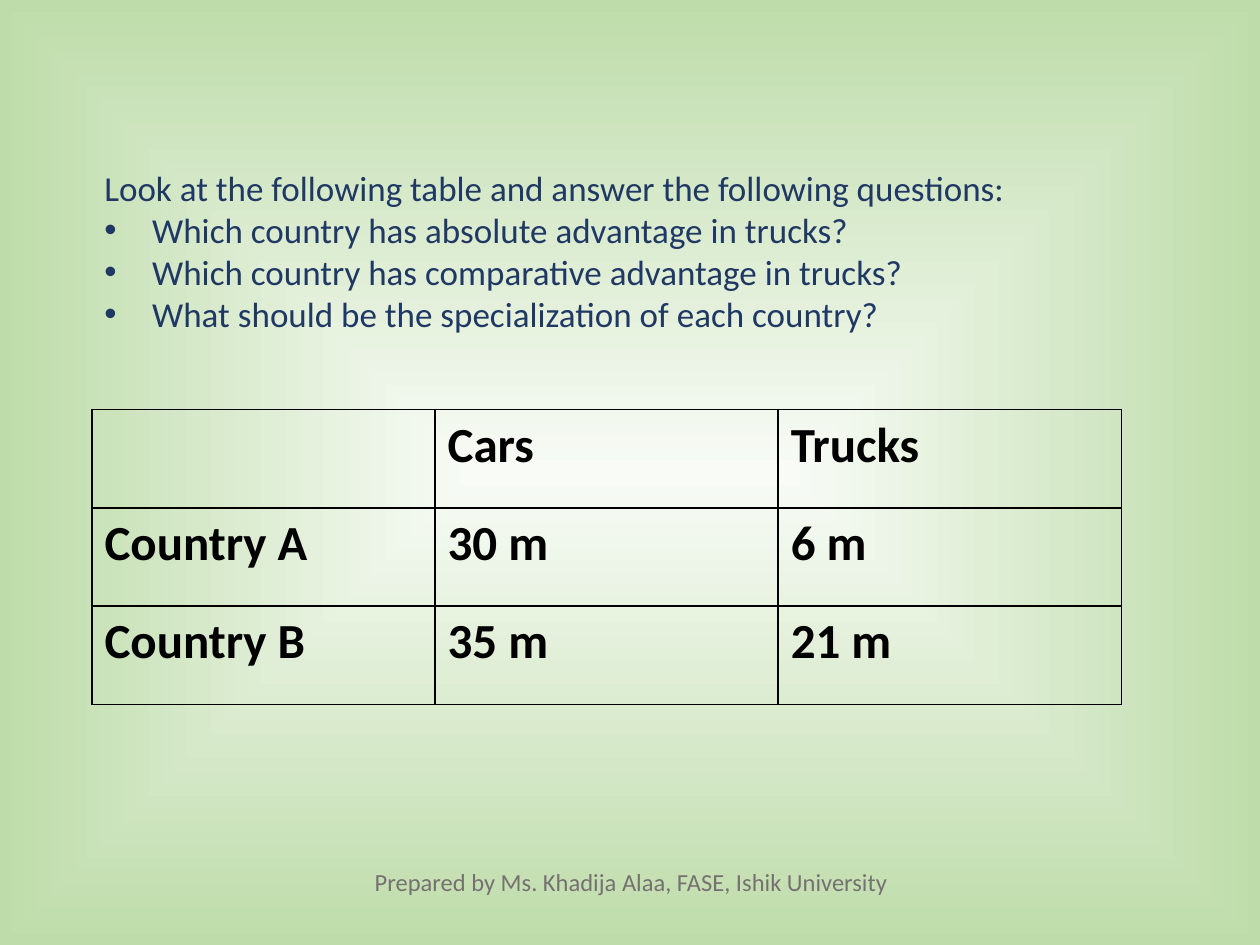
from dataclasses import dataclass

from lxml import etree
from pptx import Presentation
from pptx.dml.color import RGBColor
from pptx.enum.text import PP_ALIGN as Align
from pptx.oxml import parse_xml
from pptx.oxml.ns import nsdecls, qn
from pptx.slide import Slide
from pptx.util import Inches, Pt

NAVY = RGBColor(0x20, 0x38, 0x64)
GRAY = RGBColor(0x76, 0x71, 0x71)
BLACK = RGBColor(0, 0, 0)
PALE_GREEN = RGBColor(0xF8, 0xFB, 0xF6)
GREEN = RGBColor(0xBE, 0xDC, 0xAA)

QUESTIONS = [
    "Which country has absolute advantage in trucks?",
    "Which country has comparative advantage in trucks?",
    "What should be the specialization of each country?",
]
OUTPUT_ROWS = [
    ["", "Cars", "Trucks"],
    ["Country A", "30 m", "6 m"],
    ["Country B", "35 m", "21 m"],
]


def write_text(paragraph, text, size=20, color=NAVY, bold=False, align=Align.LEFT,
               font="Calibri", bullet_indent=None):
    if bullet_indent is not None:
        properties = paragraph._p.get_or_add_pPr()
        properties.set("marL", str(bullet_indent))
        properties.set("indent", str(-bullet_indent))
        etree.SubElement(properties, qn("a:buFont"), typeface="Arial")
        etree.SubElement(properties, qn("a:buChar"), char="•")
    paragraph.alignment = align
    run = paragraph.add_run()
    run.text = text
    run.font.name = font
    run.font.size = Pt(size)
    run.font.bold = bold
    run.font.color.rgb = color


@dataclass
class SlideBuilder:
    slide: Slide
    font: str = "Calibri"
    border_color: RGBColor = BLACK
    border_width: int = Pt(1)

    def background(self, center, edge):
        """Fill the background with a gradient that spreads from the middle."""
        fill = self.slide.background.fill
        fill.gradient()
        for stop, color, position in zip(fill.gradient_stops, (center, edge), (0, 1)):
            stop.color.rgb = color
            stop.position = position
        gradient = self.slide.element.find(".//" + qn("a:gradFill"))
        linear = gradient.find(qn("a:lin"))
        gradient.replace(linear, parse_xml(
            f'<a:path {nsdecls("a")} path="rect">'
            '<a:fillToRect l="50000" t="50000" r="50000" b="50000"/></a:path>'))

    def text_box(self, left, top, width, height):
        shape = self.slide.shapes.add_textbox(
            Inches(left), Inches(top), Inches(width), Inches(height))
        shape.text_frame.word_wrap = True
        return shape.text_frame

    def footer(self, text):
        frame = self.text_box(1.64, 6.83, 6.74, 0.6)
        write_text(frame.paragraphs[0], text, size=14, color=GRAY,
                   align=Align.CENTER, font=self.font)

    def questions(self, heading, questions):
        frame = self.text_box(0.73, 1.27, 9, 1.45)
        write_text(frame.paragraphs[0], heading, font=self.font)
        for question in questions:
            write_text(frame.add_paragraph(), question, font=self.font,
                       bullet_indent=Inches(0.38))

    def cell_borders(self, cell):
        properties = cell._tc.get_or_add_tcPr()
        for index, side in enumerate("LRTB"):
            properties.insert(index, parse_xml(
                f'<a:ln{side} {nsdecls("a")} w="{self.border_width}"><a:solidFill>'
                f'<a:srgbClr val="{self.border_color}"/></a:solidFill></a:ln{side}>'))

    def table(self, rows):
        table = self.slide.shapes.add_table(
            len(rows), len(rows[0]), Inches(0.73), Inches(3.25),
            Inches(8.17), Inches(2.34)).table
        table.first_row = table.horz_banding = False
        for row, texts in zip(table.rows, rows):
            for cell, text in zip(row.cells, texts):
                cell.fill.background()
                self.cell_borders(cell)
                if text:
                    write_text(cell.text_frame.paragraphs[0], text, size=28,
                               color=BLACK, bold=True, font=self.font)


def main():
    presentation = Presentation()
    presentation.slide_width = Inches(10)
    presentation.slide_height = Inches(7.5)
    builder = SlideBuilder(presentation.slides.add_slide(presentation.slide_layouts[6]))
    builder.background(PALE_GREEN, GREEN)
    builder.footer("Prepared by Ms. Khadija Alaa, FASE, Ishik University")
    builder.table(OUTPUT_ROWS)
    builder.questions(
        "Look at the following table and answer the following questions:", QUESTIONS)
    presentation.save("out.pptx")


if __name__ == "__main__":
    main()
